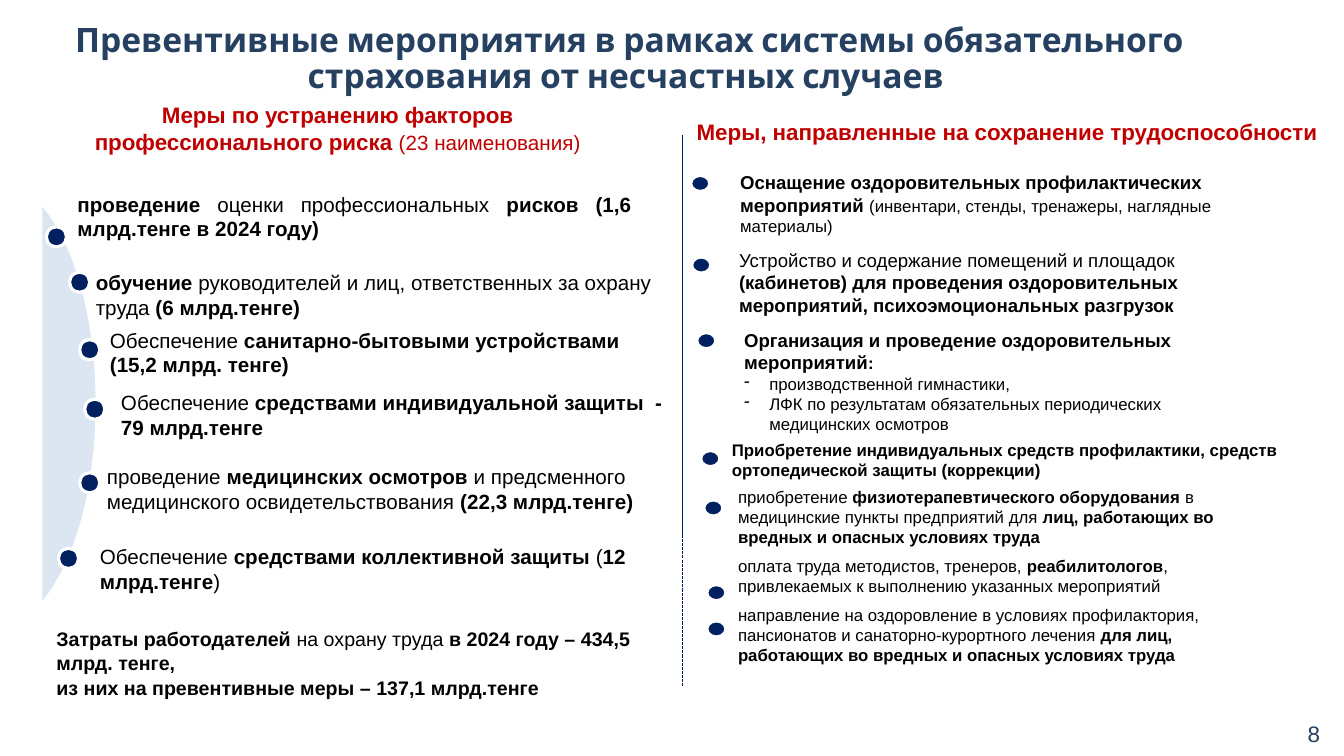
from lxml.etree import SubElement
from pptx import Presentation
from pptx.dml.color import RGBColor
from pptx.enum.dml import MSO_LINE
from pptx.enum.shapes import MSO_CONNECTOR, MSO_SHAPE
from pptx.enum.text import MSO_ANCHOR, MSO_AUTO_SIZE, PP_ALIGN
from pptx.oxml.ns import qn
from pptx.util import Inches, Pt

COLORS = {"navy": "002060", "title": "254061", "red": "C00000",
          "black": "000000", "white": "FFFFFF", "pale": "DCE6F2"}

LEFT_MEASURES = [
    (0.85, 2.67, 5.92, "*обучение *руководителей и лиц, ответственных за охрану труда *(6 млрд.тенге)*"),
    (0.99, 3.24, 5.68, "Обеспечение* санитарно-бытовыми устройствами (15,2 млрд. тенге)*"),
    (1.1, 3.86, 5.66, "Обеспечение* средствами индивидуальной защиты  - 79 млрд.тенге*"),
    (0.89, 5.39, 5.77, "Обеспечение *средствами коллективной защиты *(*12 млрд.тенге*)"),
    (0.96, 4.59, 5.92, "проведение *медицинских осмотров *и предсменного медицинского "
                       "освидетельствования *(22,3 млрд.тенге)*"),
]
RIGHT_MEASURES = [
    (7.33, 1.69, 5.48, 0.67, "*Оснащение оздоровительных профилактических мероприятий *"
                             "|(инвентари, стенды, тренажеры, наглядные материалы)"),
    (7.32, 2.46, 5.36, 0.69, "Устройство и содержание помещений и площадок *(кабинетов) для проведения "
                             "оздоровительных мероприятий, психоэмоциональных разгрузок*"),
    (7.37, 3.25, 5.5, 1.07, "*Организация и проведение оздоровительных мероприятий|:*"),
]
EXERCISES = ["|производственной гимнастики,",
             "|ЛФК по результатам обязательных периодических медицинских осмотров"]
HEALTH_SERVICES = [
    "приобретение *физиотерапевтического оборудования *в медицинские пункты предприятий для "
    "*лиц, работающих во вредных и опасных условиях труда*",
    "оплата труда методистов, тренеров, *реабилитологов*, привлекаемых к выполнению указанных мероприятий",
    "направление на оздоровление в условиях профилактория, пансионатов и санаторно-курортного лечения "
    "*для лиц, работающих во вредных и опасных условиях труда*",
]
COSTS = ["*Затраты работодателей *на охрану труда *в 2024 году – 434,5 млрд. тенге,*",
         "*из них на превентивные меры – 137,1 млрд.тенге*"]
LEFT_DOTS = [(0.46, 2.25), (0.69, 2.7), (0.79, 3.37), (0.84, 3.96), (0.79, 4.69), (0.58, 5.44)]
RIGHT_DOTS = [(6.85, 1.74), (6.86, 2.55), (6.91, 3.3), (6.95, 4.47), (6.98, 4.96), (7.01, 5.8), (7.01, 6.16)]


def apply_format(target, values):
    """Set every attribute of the target from a dict."""
    for name, value in values.items():
        setattr(target, name, value)


def color(name):
    """Return a palette colour."""
    return RGBColor.from_string(COLORS[name])


class SlideBuilder:
    """Holds the style and the current slide."""

    def __init__(self, presentation):
        """Add a title-only slide."""
        self.font = "Arial"
        self.slide = presentation.slides.add_slide(presentation.slide_layouts[5])
        self.shapes = self.slide.shapes

    def frame(self, shape, insets=(0, 0.01, 0.1, 0), anchor=MSO_ANCHOR.TOP):
        """Set the margins, wrapping and anchor of a shape's text."""
        sides = ("margin_left", "margin_top", "margin_right", "margin_bottom")
        values = {side: Inches(inset) for side, inset in zip(sides, insets)}
        values.update(word_wrap=True, auto_size=MSO_AUTO_SIZE.NONE, vertical_anchor=anchor)
        apply_format(shape.text_frame, values)
        return shape.text_frame

    def paragraph(self, paragraph, text, size, small=12, ink="black", font=None, indent=0, hanging=0,
                  bullet=None, **spacing):
        """Write a paragraph where * toggles bold and | starts the small size."""
        apply_format(paragraph, spacing)
        properties = paragraph._p.get_or_add_pPr()
        properties.set("marL", str(Inches(indent)))
        properties.set("indent", str(Inches(hanging)))
        if bullet:
            SubElement(properties, qn("a:buChar")).set("char", bullet)
        bold = False
        for part_index, part in enumerate(text.split("|")):
            for piece_index, piece in enumerate(part.split("*")):
                bold = bold != (piece_index > 0)
                if piece:
                    run = paragraph.add_run()
                    run.text = piece
                    apply_format(run.font, {"name": font or self.font, "bold": bold,
                                            "size": Pt(small if part_index else size)})
                    run.font.color.rgb = color(ink)

    def title(self, text, box):
        """Place and fill the title placeholder."""
        shape = self.shapes.title
        apply_format(shape, dict(zip(("left", "top", "width", "height"), map(Inches, box))))
        frame = self.frame(shape, (0.1, 0.05, 0.1, 0.05))
        self.paragraph(frame.paragraphs[0], text, 24, ink="title", font="Cabin",
                       alignment=PP_ALIGN.CENTER, line_spacing=0.9)

    def text(self, box, texts, size, insets=(0, 0.01, 0.1, 0), anchor=MSO_ANCHOR.TOP, **options):
        """Add a text box with one paragraph for each text."""
        frame = self.frame(self.shapes.add_textbox(*map(Inches, box)), insets, anchor)
        for index, text in enumerate(texts):
            paragraph = frame.add_paragraph() if index else frame.paragraphs[0]
            self.paragraph(paragraph, text, size, **options)
        return frame

    def paint(self, shape, fill, width):
        """Give a shape a plain fill and a white outline."""
        shape.shadow.inherit = False
        shape.fill.solid()
        shape.fill.fore_color.rgb = color(fill)
        shape.line.color.rgb = color("white")
        shape.line.width = Pt(width)

    def dot(self, left, top, width, height):
        """Add a navy bullet dot."""
        box = map(Inches, (left, top, width, height))
        self.paint(self.shapes.add_shape(MSO_SHAPE.OVAL, *box), "navy", 2.25)

    def arc(self, left, top, bottom):
        """Add the pale curved segment."""
        middle = (top + bottom) / 2
        curve = ((0.44, 2.04), (0.76, 2.42), (0.97, 3.16), (0.97, middle))
        steps = 16
        upper = []
        for step in range(steps + 1):
            t = step / steps
            weights = ((1 - t) ** 3, 3 * t * (1 - t) ** 2, 3 * t * t * (1 - t), t ** 3)
            upper.append(tuple(sum(w * point[axis] for w, point in zip(weights, curve)) for axis in (0, 1)))
        lower = [(x, 2 * middle - y) for x, y in reversed(upper[:-1])]
        builder = self.shapes.build_freeform(Inches(left), Inches(top))
        outline = upper + lower + [(left, bottom)]
        builder.add_line_segments([(Inches(x), Inches(y)) for x, y in outline], close=True)
        self.paint(builder.convert_to_shape(), "pale", 3)

    def divider(self, x, start, end, dash=None):
        """Add a vertical navy line."""
        line = self.shapes.add_connector(MSO_CONNECTOR.STRAIGHT, *map(Inches, (x, start, x, end)))
        line.line.color.rgb = color("navy")
        apply_format(line.line, {"width": Pt(0.75), "dash_style": dash})
        SubElement(line._element.spPr, qn("a:effectLst"))


def main():
    """Build and save the slide."""
    presentation = Presentation()
    apply_format(presentation, {"slide_width": Inches(13.33), "slide_height": Inches(7.5)})
    slide = SlideBuilder(presentation)
    slide.title("*Превентивные мероприятия в рамках системы обязательного страхования от несчастных случаев *",
                (0.13, 0.18, 12.23, 0.43))
    heading = {"ink": "red", "small": 14.7, "anchor": MSO_ANCHOR.BOTTOM, "alignment": PP_ALIGN.CENTER}
    slide.text((0.45, 1.07, 5.8, 0.47),
               ["*Меры по устранению факторов профессионального риска *|(23 наименования)"],
               16, (0.35, 0, 0.35, 0), **heading)
    slide.text((6.87, 1.06, 6.3, 0.38), ["*Меры, направленные на сохранение трудоспособности *"],
               16, (0, 0, 0, 0), **heading)
    slide.divider(6.77, 1.34, 5.33)
    slide.divider(6.77, 6.81, 4.96, MSO_LINE.SQUARE_DOT)

    for left, top, width, text in LEFT_MEASURES:
        slide.text((left, top, width, 0.51), [text], 14.7, indent=0.1, space_before=Pt(1.1))
    slide.text((0.66, 1.85, 6.85, 0.59),
               ["*проведение* оценки профессиональных *рисков (1,6 млрд.тенге в 2024 году)*"],
               14.7, (0.1, 0.05, 1.25, 0.05), indent=0.01, alignment=PP_ALIGN.JUSTIFY, space_before=Pt(8.1))
    slide.arc(0.4, 2, 6.01)
    for left, top in LEFT_DOTS:
        slide.dot(left, top, 0.2, 0.2)

    slide.text((7.22, 4.83, 5.43, 0.86), HEALTH_SERVICES, 12, (0, 0, 0.5, 0), indent=0.1, space_after=Pt(6))
    slide.text((7.25, 4.35, 5.43, 0.42),
               ["*Приобретение индивидуальных средств профилактики, средств ортопедической защиты (коррекции)*"],
               12, (0, 0.01, 0, 0), indent=0.01)
    for *box, text in RIGHT_MEASURES:
        frame = slide.text(box, [text], 13.3, (0, 0.01, 0.6, 0), indent=0.01)
    for exercise in EXERCISES:
        slide.paragraph(frame.add_paragraph(), exercise, 12, indent=0.26, hanging=-0.25, bullet="-")
    for left, top in RIGHT_DOTS:
        slide.dot(left, top, 0.19, 0.16)

    slide.text((0.46, 6.21, 6.2, 0.95), COSTS, 14, indent=0.1, space_before=Pt(1))
    slide.text((12.87, 7.1, 0.45, 0.37), ["8"], 16, (0.1, 0.05, 0.1, 0.05), ink="title")
    presentation.save("out.pptx")


if __name__ == "__main__":
    main()
